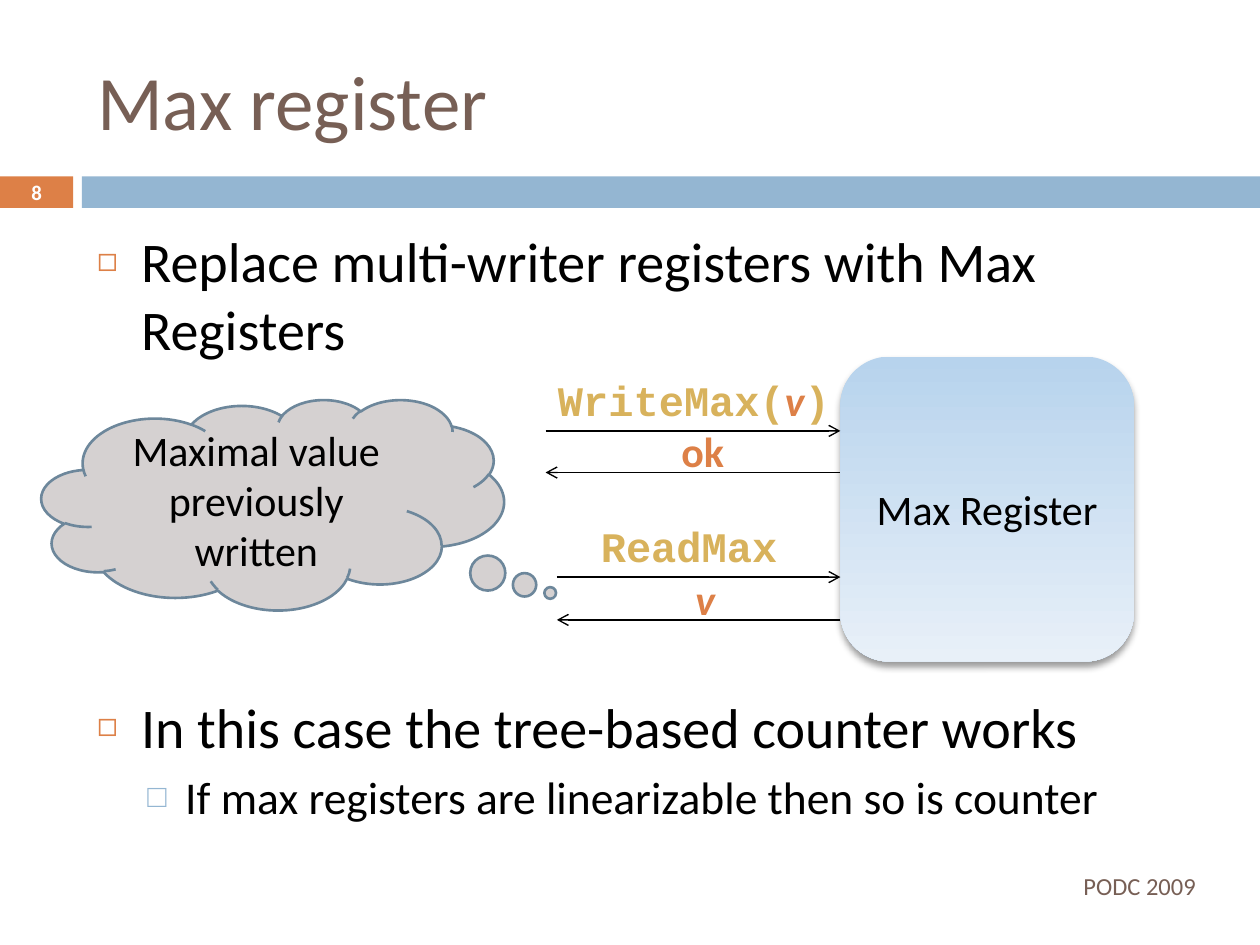
from lxml import etree
from pptx import Presentation
from pptx.dml.color import RGBColor
from pptx.enum.shapes import MSO_CONNECTOR, MSO_SHAPE
from pptx.enum.text import MSO_ANCHOR, MSO_AUTO_SIZE, PP_ALIGN
from pptx.oxml.ns import qn
from pptx.util import Inches, Pt

LEFT, CENTER, RIGHT = PP_ALIGN.LEFT, PP_ALIGN.CENTER, PP_ALIGN.RIGHT
TOP, MIDDLE = MSO_ANCHOR.TOP, MSO_ANCHOR.MIDDLE
ORANGE, BLUE, BROWN, GOLD = "DD8047", "94B6D2", "775F55", "D8B25C"
BLACK, WHITE = "000000", "FFFFFF"


def color(value):
    return RGBColor.from_string(value)


def write(shape, pieces, size, align=LEFT, anchor=MIDDLE, wrap=True):
    """Fill a shape with one paragraph of (text, font, colour, bold, italic) pieces."""
    frame = shape.text_frame
    frame.word_wrap = wrap
    frame.auto_size = MSO_AUTO_SIZE.NONE if wrap else MSO_AUTO_SIZE.SHAPE_TO_FIT_TEXT
    frame.vertical_anchor = anchor
    para = frame.paragraphs[0]
    para.alignment = align
    for text, font, hue, bold, italic in pieces:
        span = para.add_run()
        span.text = text
        span.font.name = font
        span.font.size = Pt(size)
        span.font.color.rgb = color(hue)
        span.font.bold = bold
        span.font.italic = italic


deck = Presentation()
deck.slide_width, deck.slide_height = Inches(10), Inches(7.5)
page = deck.slides.add_slide(deck.slide_layouts[1])
shapes = page.shapes

# Title
title = shapes.title
title.left, title.top, title.width, title.height = map(Inches, (0.67, 0.25, 8.92, 1.08))
write(title, [("Max register", "Calibri", BROWN, False, False)], 44)

# Band below the title
for left, width, fill in ((0, 0.58, ORANGE), (0.65, 9.35, BLUE)):
    band = shapes.add_shape(MSO_SHAPE.RECTANGLE, Inches(left), Inches(1.4), Inches(width), Inches(0.25))
    band.shadow.inherit = False
    band.fill.solid()
    band.fill.fore_color.rgb = color(fill)
    band.line.fill.background()

# Bullets: level, text, size, space before, indent, hang, bullet, bullet colour, bullet percent
bullets = [
    (0, "Replace multi-writer registers with Max Registers", 32, 7, 0.35, 0.35, "◻", ORANGE, 60),
    (0, "In this case the tree-based counter works", 32, 189, 0.35, 0.35, "◻", ORANGE, 60),
    (1, "If max registers are linearizable then so is counter", 26, 5.5, 0.7, 0.3, "□", BLUE, 70),
]
body = page.placeholders[1]
body.left, body.top, body.width, body.height = map(Inches, (0.67, 1.75, 8.92, 5.42))
body.text_frame.auto_size = MSO_AUTO_SIZE.NONE
body.text_frame.text = "\n".join(bullet[1] for bullet in bullets)
for para, bullet in zip(body.text_frame.paragraphs, bullets):
    level, text, size, before, indent, hang, mark, hue, percent = bullet
    para.level = level
    para.space_before = Pt(before)
    para.font.size = Pt(size)
    font = para.runs[0].font
    font.name, font.size = "Calibri", Pt(size)
    font.color.rgb = color(BLACK)
    props = para._p.get_or_add_pPr()
    props.set("marL", str(Inches(indent)))
    props.set("indent", str(-Inches(hang)))
    tint = etree.Element(qn("a:buClr"))
    etree.SubElement(tint, qn("a:srgbClr"), val=hue)
    scale = etree.Element(qn("a:buSzPct"), val=str(percent * 1000))
    char = etree.Element(qn("a:buChar"), char=mark)
    place = list(props).index(props.find(qn("a:spcBef"))) + 1
    props[place:place] = [tint, scale, char]

# Register box with gradient and soft shadow
register = shapes.add_shape(MSO_SHAPE.ROUNDED_RECTANGLE, Inches(6.67), Inches(2.83), Inches(2.33), Inches(2.42))
register.line.fill.background()
register.fill.gradient()
register.fill.gradient_angle = 270
for stop, hue in zip(register.fill.gradient_stops, ("B7D3ED", "E8F0F8")):
    stop.color.rgb = color(hue)
register.shadow.inherit = False
effects = register._element.spPr.find(qn("a:effectLst"))
shadow = etree.SubElement(effects, qn("a:outerShdw"), blurRad=str(Pt(4)), dist=str(Pt(3)),
                          dir="5400000", rotWithShape="0")
shade = etree.SubElement(shadow, qn("a:srgbClr"), val=BLACK)
etree.SubElement(shade, qn("a:alpha"), val="40000")
write(register, [("Max Register", "Calibri", BLACK, False, False)], 24, CENTER)

# Calls go right to the register, replies come back
for start, height, end in ((4.33, 3.42, "tailEnd"), (4.33, 3.75, "headEnd"),
                           (4.42, 4.58, "tailEnd"), (4.42, 4.92, "headEnd")):
    arrow = shapes.add_connector(MSO_CONNECTOR.STRAIGHT, Inches(start), Inches(height),
                                 Inches(6.67), Inches(height))
    arrow.line.color.rgb = color(BLACK)
    arrow.line.width = Pt(0.79)
    etree.SubElement(arrow.line._get_or_add_ln(), qn("a:" + end), type="arrow")
    etree.SubElement(arrow._element.spPr, qn("a:effectLst"))

# Thought cloud
cloud = shapes.add_shape(MSO_SHAPE.CLOUD_CALLOUT, Inches(0.33), Inches(3.17), Inches(3.67), Inches(1.67))
cloud.adjustments[0], cloud.adjustments[1] = 0.6, 0.42
cloud.shadow.inherit = False
cloud.fill.solid()
cloud.fill.fore_color.rgb = color("D5D1D1")
cloud.line.color.rgb = color("6D879B")
cloud.line.width = Pt(1.5)
write(cloud, [("Maximal value previously written", "Calibri", BLACK, False, False)], 24, CENTER)

# Arrow labels, footer and page number
value = ("v", "Calibri", ORANGE, True, True)
labels = [
    (4.33, 2.92, 2.42, 0.5, [("WriteMax(", "Courier New", GOLD, True, False), value,
                             (")", "Courier New", GOLD, True, False)], 24, LEFT, TOP, False),
    (5.31, 3.33, 0.54, 0.5, [("ok", "Calibri", ORANGE, True, False)], 24, LEFT, TOP, False),
    (4.67, 4.08, 1.61, 0.5, [("ReadMax", "Courier New", GOLD, True, False)], 24, LEFT, TOP, False),
    (5.42, 4.5, 0.36, 0.5, [value], 24, LEFT, TOP, False),
    (6.67, 6.83, 2.92, 0.4, [("PODC 2009", "Calibri", BROWN, False, False)], 14, RIGHT, MIDDLE, True),
    (0, 1.39, 0.58, 0.27, [("8", "Calibri", WHITE, True, False)], 11.9, CENTER, MIDDLE, True),
]
for left, top, width, height, *content in labels:
    box = shapes.add_textbox(Inches(left), Inches(top), Inches(width), Inches(height))
    write(box, *content)

deck.save("out.pptx")
